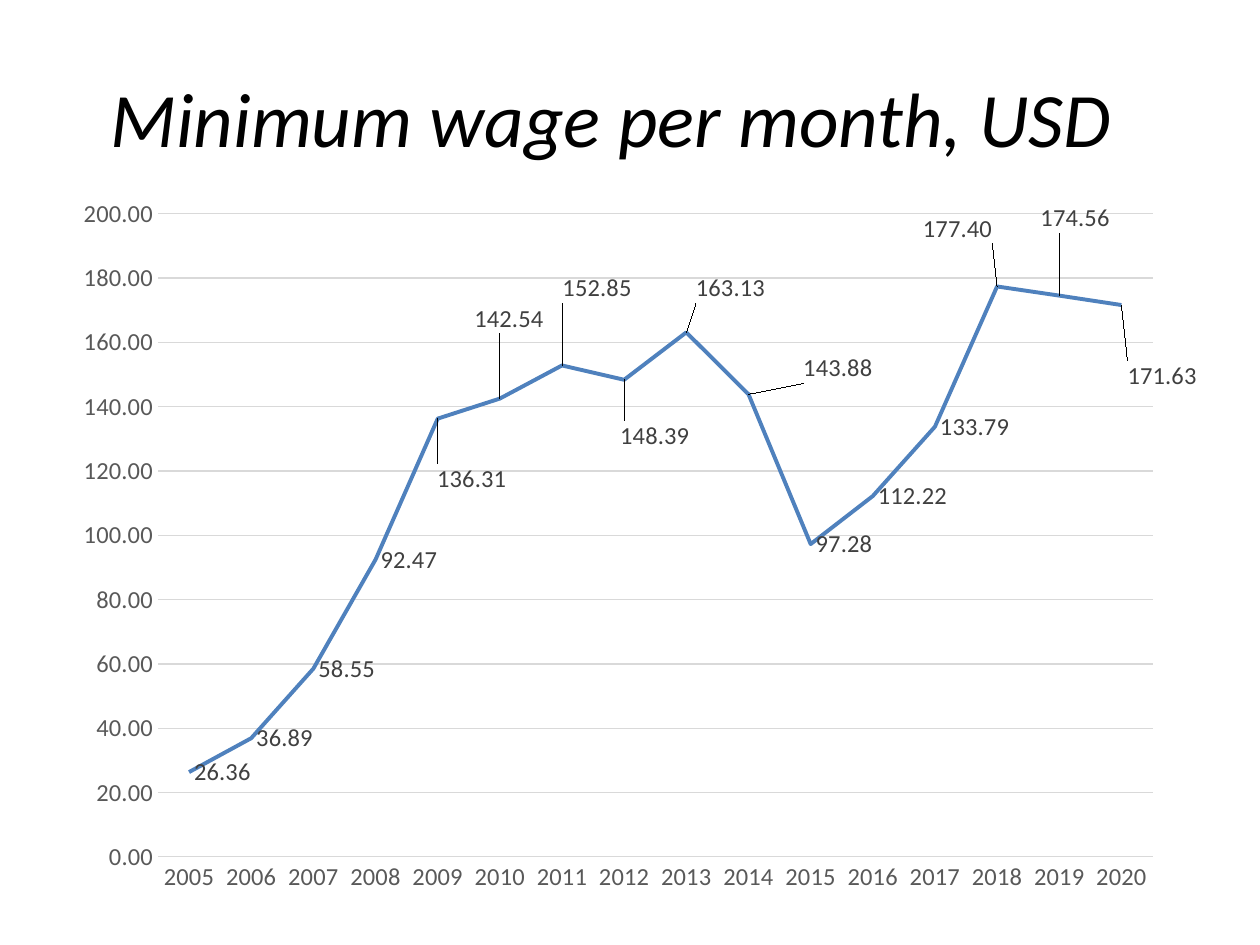
from lxml import etree
from pptx import Presentation
from pptx import util as u
from pptx.chart.data import CategoryChartData
from pptx.dml.color import RGBColor
from pptx.enum import chart as ch, text
from pptx.oxml.ns import qn

TITLE = "Minimum wage per month, USD"
FONT = "Calibri"
WAGES = {
    2005: 26.36, 2006: 36.89, 2007: 58.55, 2008: 92.47,
    2009: 136.31, 2010: 142.54, 2011: 152.85, 2012: 148.39,
    2013: 163.13, 2014: 143.88, 2015: 97.28, 2016: 112.22,
    2017: 133.79, 2018: 177.40, 2019: 174.56, 2020: 171.63,
}
# Label shifts from the point, in percent of the chart's width and height
SHIFTS = {
    2009: (-0.5, 8.3), 2010: (-2.7, -11.1), 2011: (-0.4, -10.7),
    2012: (-0.8, 7.8), 2013: (0.4, -6.1), 2014: (4.4, -3.6),
    2018: (-7, -8), 2019: (-2.1, -10.7), 2020: (0.1, 9.8),
}
PLOT = {"x": 8.4, "y": 4, "w": 87.9, "h": 89.1}  # percent of the chart


def color(code):
    return RGBColor.from_string(code)


def style(font, size, code, italic=False):
    font.name, font.size, font.italic = FONT, u.Pt(size), italic
    font.color.rgb = color(code)


def stroke(line, code, width):
    line.color.rgb = color(code)
    line.width = u.Pt(width)


def write(slide, words, box, size=14, code="000000", italic=False, right=0.25):
    """Add a centred text box; right is the right inset in cm."""
    frame = slide.shapes.add_textbox(*map(u.Cm, box)).text_frame
    frame.word_wrap = True
    frame.margin_right = u.Cm(right)
    frame.vertical_anchor = text.MSO_ANCHOR.MIDDLE
    para = frame.paragraphs[0]
    para.alignment = text.PP_ALIGN.CENTER
    run = para.add_run()
    run.text = words
    style(run.font, size, code, italic)


def place(parent, index, parts, inner=False):
    """Give a chart part a manual layout, with parts in percent."""
    for old in parent.findall(qn("c:layout")):
        parent.remove(old)
    layout = etree.Element(qn("c:layout"))
    parent.insert(index, layout)
    manual = etree.SubElement(layout, qn("c:manualLayout"))
    items = {}
    if inner:
        items = {"layoutTarget": "inner", "xMode": "edge", "yMode": "edge"}
    items.update({key: f"{val / 100:.3f}" for key, val in parts.items()})
    for key, val in items.items():
        etree.SubElement(manual, qn("c:" + key)).set("val", val)


def draw(slide, box):
    data = CategoryChartData(number_format="0.00")
    data.categories = [str(year) for year in WAGES]
    data.add_series("Series 1", WAGES.values())
    chart = slide.shapes.add_chart(
        ch.XL_CHART_TYPE.LINE, *map(u.Cm, box), data).chart
    chart.has_legend = chart.has_title = False
    style(chart.font, 10, "000000")
    place(chart.plots[0]._element.getparent(), 0, PLOT, inner=True)

    years, scale = chart.category_axis, chart.value_axis
    for axis in (years, scale):
        axis.major_tick_mark = axis.minor_tick_mark = ch.XL_TICK_MARK.NONE
        style(axis.tick_labels.font, 14, "595959")
    stroke(years.format.line, "D9D9D9", 0.75)
    scale.format.line.fill.background()
    scale.minimum_scale, scale.maximum_scale, scale.major_unit = 0, 200, 20
    scale.tick_labels.number_format = "0.00"
    scale.tick_labels.number_format_is_linked = False
    stroke(scale.major_gridlines.format.line, "D9D9D9", 0.75)

    chart.plots[0].vary_by_categories = False
    wage = chart.plots[0].series[0]
    wage.smooth = False
    wage.marker.style = ch.XL_MARKER_STYLE.NONE
    stroke(wage.format.line, "4F81BD", 2.25)
    labels = wage.data_labels
    labels.show_value = True
    labels.number_format = "0.00"
    labels.number_format_is_linked = False
    labels.position = ch.XL_LABEL_POSITION.RIGHT
    style(labels.font, 14, "404040")
    for i, year in enumerate(WAGES):
        if year in SHIFTS:
            label = wage.points[i].data_label
            style(label.font, 14, "404040")
            label.position = ch.XL_LABEL_POSITION.RIGHT
            node = labels._element.findall(qn("c:dLbl"))[-1]
            place(node, 1, dict(zip("xy", SHIFTS[year])))


def main():
    deck = Presentation()
    deck.slide_width, deck.slide_height = u.Cm(25.4), u.Cm(19.05)
    slide = deck.slides.add_slide(deck.slide_layouts[6])
    write(slide, TITLE, (1.27, 0.76, 22.86, 3.18), size=44, italic=True, right=1)
    draw(slide, (1.27, 3.73, 22.86, 14.55))
    deck.save("out.pptx")


if __name__ == "__main__":
    main()
